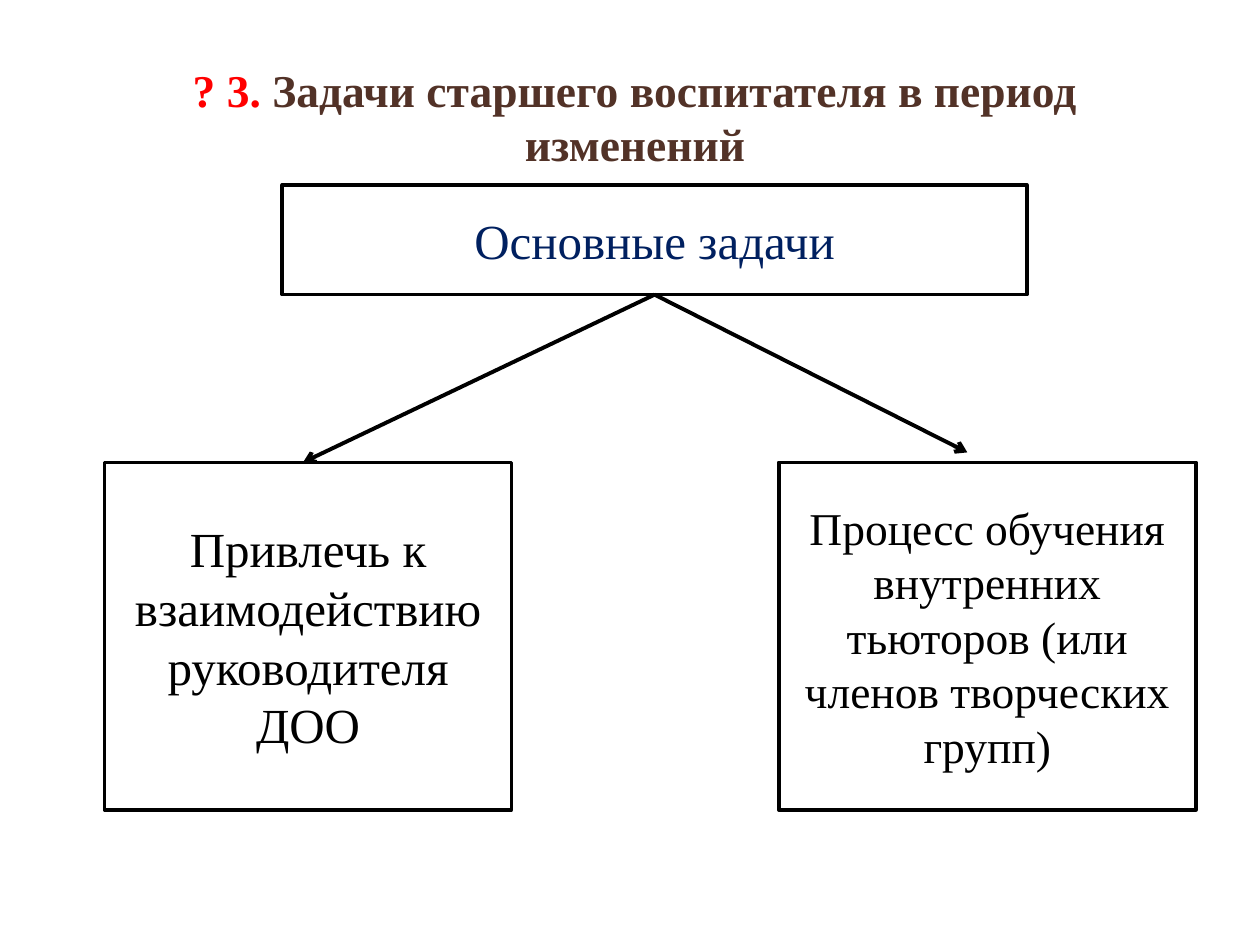
from collections import namedtuple

from lxml import etree
from pptx import Presentation
from pptx.dml.color import RGBColor
from pptx.enum import shapes, text
from pptx.oxml.ns import qn
from pptx.util import Cm, Pt

BLACK = RGBColor(0x00, 0x00, 0x00)
RED = RGBColor(0xFF, 0x00, 0x00)
BROWN = RGBColor(0x52, 0x32, 0x27)
NAVY = RGBColor(0x00, 0x20, 0x60)
FONT = "Times New Roman"

Box = namedtuple("Box", "left top width height")


def write(frame, *parts, size=28, bold=False, anchor=text.MSO_ANCHOR.MIDDLE):
    """Fill a text frame with one centred paragraph of (wording, colour) parts."""
    frame.word_wrap = True
    frame.vertical_anchor = anchor
    paragraph = frame.paragraphs[0]
    paragraph.alignment = text.PP_ALIGN.CENTER
    for wording, color in parts:
        run = paragraph.add_run()
        run.text = wording
        run.font.name = FONT
        run.font.size = Pt(size)
        run.font.bold = bold
        run.font.color.rgb = color


def add_title(slide, box):
    """Place the two-coloured heading."""
    title = slide.shapes.add_textbox(*map(Cm, box))
    write(title.text_frame, ("? 3.", RED),
          (" Задачи старшего воспитателя в период изменений", BROWN),
          size=26, bold=True, anchor=text.MSO_ANCHOR.TOP)


def add_task(slide, box, wording, color=BLACK, size=28):
    """Place one outlined task box."""
    task = slide.shapes.add_shape(shapes.MSO_SHAPE.RECTANGLE, *map(Cm, box))
    task.shadow.inherit = False
    task.fill.background()
    task.line.color.rgb = BLACK
    task.line.width = Pt(2)
    write(task.text_frame, (wording, color), size=size)


def add_arrow(slide, start, end):
    """Draw an arrow between two points."""
    arrow = slide.shapes.add_connector(
        shapes.MSO_CONNECTOR.STRAIGHT, *map(Cm, start + end))
    arrow.line.color.rgb = BLACK
    arrow.line.width = Pt(2.25)
    etree.SubElement(arrow.line._get_or_add_ln(), qn("a:tailEnd"), type="arrow")
    etree.SubElement(arrow._element.spPr, qn("a:effectLst"))


def add_task_tree(slide, box):
    """Place the main box, its two branches and the arrows to them."""
    root = Box(box.left + 3.58, box.top, 15.01, 2.21)
    branch_top, branch_height = box.top + 5.59, box.height - 5.59
    manager = Box(box.left, branch_top, 8.2, branch_height)
    tutors = Box(box.left + box.width - 8.41, branch_top, 8.41, branch_height)
    add_task(slide, root, "Основные задачи", color=NAVY)
    add_task(slide, manager, "Привлечь к взаимодействию руководителя ДОО")
    add_task(slide, tutors,
             "Процесс обучения внутренних тьюторов (или членов творческих групп)",
             size=26)
    fork = (root.left + root.width / 2, root.top + root.height)
    add_arrow(slide, fork, (manager.left + 4, branch_top))
    add_arrow(slide, fork, (tutors.left + 3.8, branch_top - 0.2))


def main():
    """Build and save the slide."""
    deck = Presentation()
    deck.slide_width, deck.slide_height = Cm(25.4), Cm(19.05)
    slide = deck.slides.add_slide(deck.slide_layouts[6])
    add_title(slide, Box(1.3, 1.12, 23.01, 1.37))
    add_task_tree(slide, Box(2.11, 3.73, 22, 12.6))
    deck.save("out.pptx")


if __name__ == "__main__":
    main()
